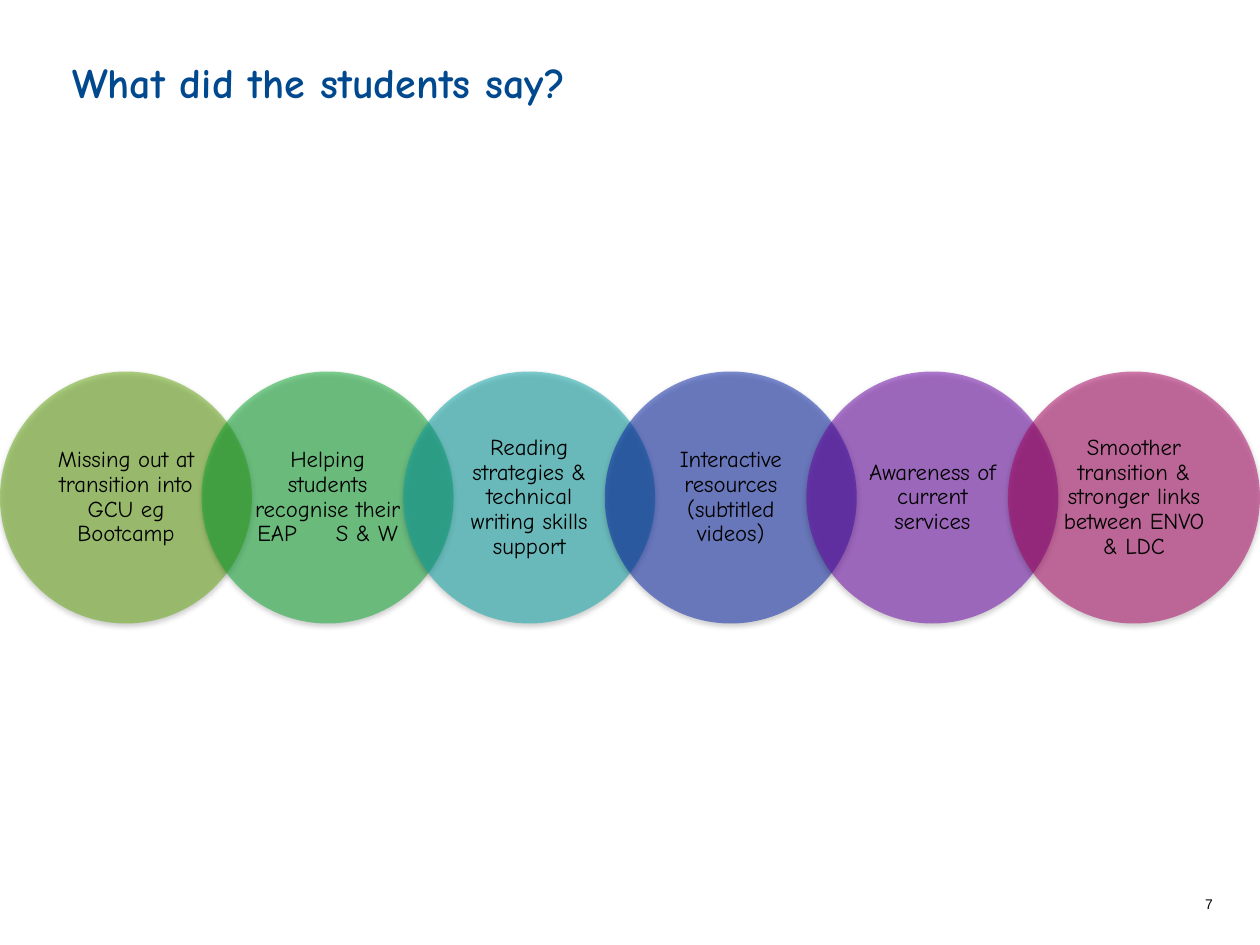
from lxml import etree
from pptx import Presentation
from pptx import util as u
from pptx.dml.color import RGBColor
from pptx.enum import shapes, text
from pptx.oxml.ns import qn

BLACK = RGBColor(0x00, 0x00, 0x00)
TITLE_BLUE = RGBColor(0x01, 0x49, 0x8E)
GREEN = RGBColor(0x64, 0xA7, 0x0B)
EMERALD = RGBColor(0x09, 0xA8, 0x2D)
TEAL = RGBColor(0x06, 0xA4, 0xA8)
BLUE = RGBColor(0x04, 0x20, 0xA9)
PURPLE = RGBColor(0x6B, 0x02, 0xA9)
MAGENTA = RGBColor(0xAA, 0x00, 0x61)

HAND_FONT = "Comic Neue"
DIAMETER = 5.08
STEP = DIAMETER * 0.8  # neighbours overlap by a fifth
CIRCLES_TOP = 7.49
LABEL_INSET = 0.74  # from the circle's bounds to its inscribed square
LABEL_SIZE = DIAMETER - 2 * LABEL_INSET

# Each comment is a list of runs; a wide gap separates the runs
COMMENTS = [
    (GREEN, ["Missing out at transition into GCU eg Bootcamp"]),
    (EMERALD, ["Helping students recognise their EAP", "S & W"]),
    (TEAL, ["Reading strategies & technical writing skills support"]),
    (BLUE, ["Interactive resources (subtitled videos)"]),
    (PURPLE, ["Awareness of current services"]),
    (MAGENTA, ["Smoother transition & stronger links between ENVO & LDC"]),
]


def style_font(font, name, size, color, bold=False):
    font.name = name
    font.size = u.Pt(size)
    font.bold = bold
    font.color.rgb = color


def add_title(slide, wording):
    title = slide.shapes.title
    title.left, title.top = u.Cm(1.2), u.Cm(1.02)
    title.width, title.height = u.Cm(23), u.Cm(1.27)
    frame = title.text_frame
    frame.text = wording
    frame.vertical_anchor = text.MSO_ANCHOR.TOP
    frame.auto_size = text.MSO_AUTO_SIZE.NONE
    paragraph = frame.paragraphs[0]
    paragraph.alignment = text.PP_ALIGN.LEFT
    style_font(paragraph.runs[0].font, HAND_FONT, 24, TITLE_BLUE, bold=True)


def add_page_number(slide, number):
    box = slide.shapes.add_textbox(u.Cm(13.7), u.Cm(17.93), u.Cm(11), u.Cm(0.6))
    box.text_frame.word_wrap = True
    box.text_frame.text = str(number)
    paragraph = box.text_frame.paragraphs[0]
    paragraph.alignment = text.PP_ALIGN.RIGHT
    style_font(paragraph.runs[0].font, "Arial", 8, BLACK)


def set_transparency(shape, percent):
    color = shape.fill._xPr.find(qn("a:solidFill"))[0]
    etree.SubElement(color, qn("a:alpha"), val=str((100 - percent) * 1000))


def add_soft_shadow(shape):
    shape.shadow.inherit = False
    effects = shape._element.spPr.find(qn("a:effectLst"))
    shadow = etree.SubElement(
        effects, qn("a:outerShdw"), blurRad=str(u.Pt(3.1)), dist=str(u.Pt(1.6)),
        dir="5400000", rotWithShape="0")
    color = etree.SubElement(shadow, qn("a:srgbClr"), val=str(BLACK))
    etree.SubElement(color, qn("a:alpha"), val="38000")


def add_circle(slide, left, color):
    circle = slide.shapes.add_shape(
        shapes.MSO_SHAPE.OVAL, u.Cm(left), u.Cm(CIRCLES_TOP),
        u.Cm(DIAMETER), u.Cm(DIAMETER))
    circle.fill.solid()
    circle.fill.fore_color.rgb = color
    set_transparency(circle, 50)
    circle.line.fill.background()
    add_soft_shadow(circle)


def add_comment(slide, circle_left, parts):
    # A separate box keeps the circle's shadow off the letters
    box = slide.shapes.add_textbox(
        u.Cm(circle_left + LABEL_INSET), u.Cm(CIRCLES_TOP + LABEL_INSET),
        u.Cm(LABEL_SIZE), u.Cm(LABEL_SIZE))
    frame = box.text_frame
    frame.word_wrap = True
    frame.vertical_anchor = text.MSO_ANCHOR.MIDDLE
    frame.margin_left = frame.margin_right = u.Cm(0.28)
    frame.margin_top = frame.margin_bottom = u.Cm(0.05)
    paragraph = frame.paragraphs[0]
    paragraph.alignment = text.PP_ALIGN.CENTER
    paragraph.line_spacing = 0.9
    for index, part in enumerate(parts):
        if index:
            # One space widened by character spacing
            gap = paragraph.add_run()
            gap.text = " "
            gap.font._element.set("spc", "1800")
        paragraph.add_run().text = part
    for run in paragraph.runs:
        style_font(run.font, HAND_FONT, 13, BLACK)


def main():
    presentation = Presentation()
    presentation.slide_width, presentation.slide_height = u.Cm(25.4), u.Cm(19.05)
    slide = presentation.slides.add_slide(presentation.slide_layouts[5])

    # Heading and page number
    add_page_number(slide, 7)
    add_title(slide, "What did the students say?")

    # Chain of overlapping circles
    for index, (color, parts) in enumerate(COMMENTS):
        add_circle(slide, index * STEP, color)
        add_comment(slide, index * STEP, parts)

    presentation.save("out.pptx")


if __name__ == "__main__":
    main()
